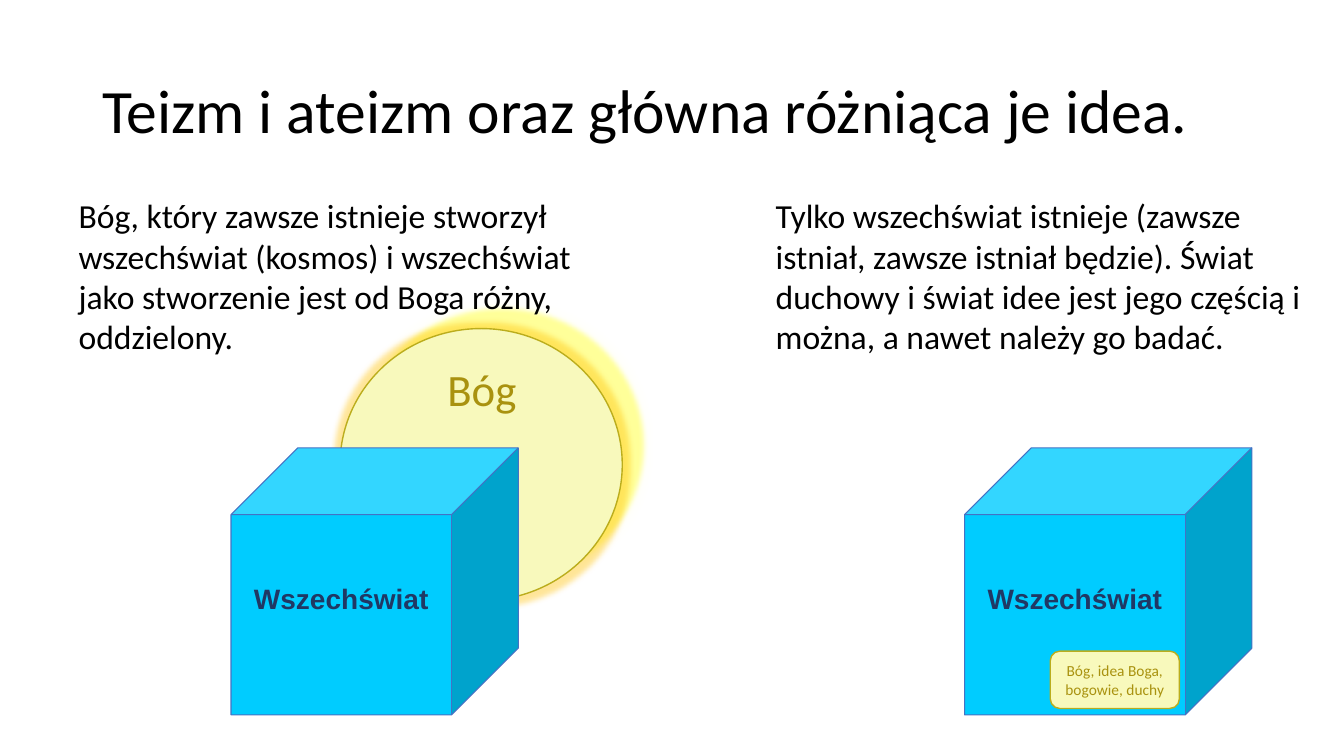
import lxml.etree
import pptx
import pptx.dml.color
import pptx.enum.shapes
import pptx.enum.text
import pptx.oxml
import pptx.oxml.ns
import pptx.util

Pt = pptx.util.Pt
RGBColor = pptx.dml.color.RGBColor
Shape = pptx.enum.shapes.MSO_SHAPE
Align = pptx.enum.text.PP_ALIGN
Anchor = pptx.enum.text.MSO_ANCHOR

BLACK = RGBColor(0x00, 0x00, 0x00)
CREAM = RGBColor(0xF8, 0xF9, 0xBC)
OLIVE = RGBColor(0xBB, 0xAD, 0x1D)
GOLD_TEXT = RGBColor(0xA9, 0x92, 0x0F)
CYAN = RGBColor(0x00, 0xCC, 0xFF)
BLUE_EDGE = RGBColor(0x44, 0x72, 0xC4)
NAVY = RGBColor(0x20, 0x38, 0x64)
GLOW = RGBColor(0xFF, 0xC0, 0x00)
HALO = RGBColor(0xFF, 0xFF, 0x00)

COLUMN_TOP, COLUMN_WIDTH, COLUMN_HEIGHT = 136, 406, 124
CUBE_TOP, CUBE_WIDTH, CUBE_HEIGHT = 319.9, 205.2, 190.8


def write(frame, text, size, color, font="Calibri", bold=False, align=Align.LEFT):
    paragraph = frame.paragraphs[0]
    paragraph.alignment = align
    run = paragraph.add_run()
    run.text = text
    run.font.name = font
    run.font.size = Pt(size)
    run.font.bold = bold
    run.font.color.rgb = color
    return paragraph


def add_text(slide, box, text, size, color=BLACK, align=Align.LEFT, anchor=Anchor.TOP):
    frame = slide.shapes.add_textbox(*map(Pt, box)).text_frame
    frame.word_wrap = True
    frame.vertical_anchor = anchor
    return write(frame, text, size, color, align=align)


def add_figure(slide, preset, box, fill, edge, edge_width):
    figure = slide.shapes.add_shape(preset, *map(Pt, box))
    figure.shadow.inherit = False
    figure.fill.solid()
    figure.fill.fore_color.rgb = fill
    figure.line.color.rgb = edge
    figure.line.width = Pt(edge_width)
    figure.text_frame.vertical_anchor = Anchor.MIDDLE
    return figure


def add_radiance(figure):
    """Give the figure an orange glow and a yellow halo to its upper right."""
    effects = figure.element.spPr.find(pptx.oxml.ns.qn("a:effectLst"))
    halo_settings = {"blurRad": Pt(4), "dist": Pt(20), "dir": 315 * 60000}
    for kind, color, settings in (
        ("a:glow", GLOW, {"rad": Pt(8)}),
        ("a:outerShdw", HALO, halo_settings),
    ):
        effect = lxml.etree.SubElement(effects, pptx.oxml.ns.qn(kind))
        for name, value in settings.items():
            effect.set(name, str(int(value)))
        tint = lxml.etree.SubElement(effect, pptx.oxml.ns.qn("a:srgbClr"), val=str(color))
        lxml.etree.SubElement(tint, pptx.oxml.ns.qn("a:alpha"), val="40000")


def add_universe(slide, left):
    cube = add_figure(slide, Shape.CUBE, (left, CUBE_TOP, CUBE_WIDTH, CUBE_HEIGHT),
                      CYAN, BLUE_EDGE, 0.75)
    frame = cube.text_frame
    frame.word_wrap = False
    frame.margin_bottom = Pt(26.6)  # lifts the label above the middle of the face
    write(frame, "Wszechświat", 20, NAVY, "Arial", True, Align.CENTER)


def main():
    deck = pptx.Presentation()
    deck.slide_width, deck.slide_height = Pt(960), Pt(540)
    slide = deck.slides.add_slide(deck.slide_layouts[6])

    god = add_figure(slide, Shape.OVAL, (242.9, 234.7, 201.6, 194.4), CREAM, OLIVE, 1)
    add_radiance(god)
    add_text(slide, (273, 255, 142.5, 45), "Bóg", 32, GOLD_TEXT, Align.CENTER)

    for left in (165, 689):
        add_universe(slide, left)

    ideas = add_figure(slide, Shape.ROUNDED_RECTANGLE, (750.2, 465.1, 92.2, 41),
                       CREAM, OLIVE, 1)
    ideas.text_frame.word_wrap = True
    write(ideas.text_frame, "Bóg, idea Boga, bogowie, duchy", 11, GOLD_TEXT,
          align=Align.CENTER)

    title = add_text(slide, (66, 28.8, 828, 104.4),
                     "Teizm i ateizm oraz główna różniąca je idea.", 44,
                     anchor=Anchor.MIDDLE)
    title.line_spacing = 0.9

    for left, belief in (
        (49, "Bóg, który zawsze istnieje stworzył wszechświat (kosmos) i wszechświat "
             "jako stworzenie jest od Boga różny, oddzielony."),
        (547, "Tylko wszechświat istnieje (zawsze istniał, zawsze istniał będzie). Świat "
              "duchowy i świat idee jest jego częścią i można, a nawet należy go badać."),
    ):
        add_text(slide, (left, COLUMN_TOP, COLUMN_WIDTH, COLUMN_HEIGHT), belief, 24)

    deck.save("out.pptx")


if __name__ == "__main__":
    main()
